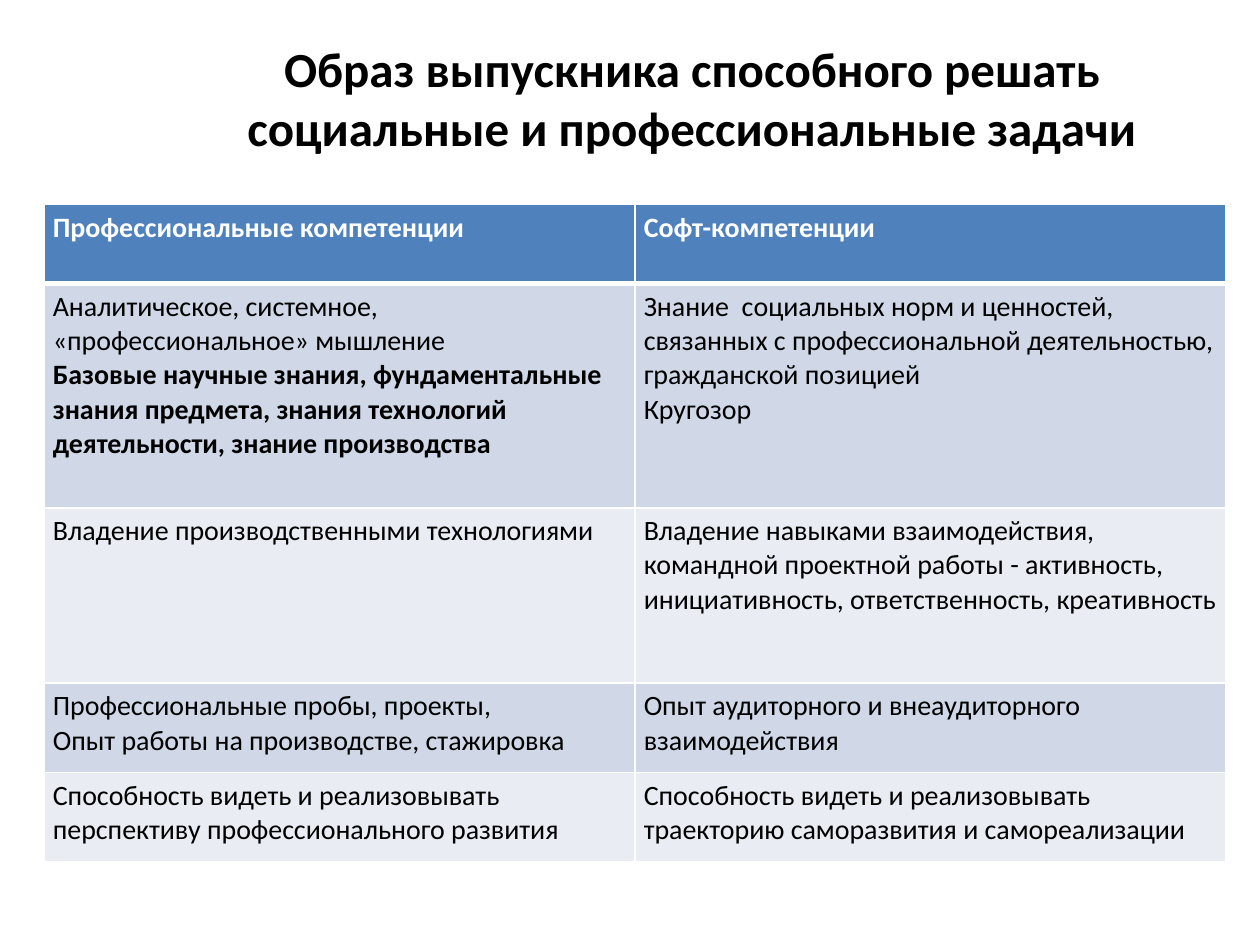
from dataclasses import dataclass

from lxml.etree import SubElement
from pptx import Presentation
from pptx.dml.color import RGBColor
from pptx.enum.text import MSO_ANCHOR, PP_ALIGN
from pptx.oxml.ns import qn
from pptx.util import Inches, Pt


@dataclass(frozen=True)
class Theme:
    font: str = "Calibri"
    title_size: int = 28
    cell_size: int = 16
    text: str = "000000"
    header_text: str = "FFFFFF"
    header_fill: str = "4F81BD"
    band_fills: tuple = ("D0D8E7", "E9ECF3")
    border: str = "FFFFFF"
    thin: float = 0.96
    thick: float = 3


THEME = Theme()

TITLE = "Образ выпускника способного решать социальные и профессиональные задачи"

# Each cell is a list of paragraphs
ROWS = [
    (["Профессиональные компетенции"], ["Софт-компетенции"]),
    (["Аналитическое, системное, «профессиональное» мышление",
      "Базовые научные знания, фундаментальные знания предмета, "
      "знания технологий деятельности, знание производства"],
     ["Знание  социальных норм и ценностей, связанных с профессиональной "
      "деятельностью, гражданской позицией",
      "Кругозор"]),
    (["Владение производственными технологиями"],
     ["Владение навыками взаимодействия, командной проектной работы - "
      "активность, инициативность, ответственность, креативность"]),
    (["Профессиональные пробы, проекты,",
      "Опыт работы на производстве, стажировка"],
     ["Опыт аудиторного и внеаудиторного взаимодействия"]),
    (["Способность видеть и реализовывать перспективу профессионального развития"],
     ["Способность видеть и реализовывать траекторию саморазвития и самореализации"]),
]
ROW_HEIGHTS = (0.63, 1.78, 1.39, 0.71, 0.71)
BOLD_PARAGRAPHS = {ROWS[1][0][1]}


def write_paragraphs(tf, texts, size, color, bold=False, align=PP_ALIGN.LEFT):
    for i, text in enumerate(texts):
        p = tf.paragraphs[0] if i == 0 else tf.add_paragraph()
        p.text = text
        p.alignment = align
        p.font.name = THEME.font
        p.font.size = Pt(size)
        p.font.bold = bold or text in BOLD_PARAGRAPHS
        p.font.color.rgb = RGBColor.from_string(color)


def set_borders(cell, top, bottom):
    tcPr = cell._tc.get_or_add_tcPr()
    widths = {"a:lnL": THEME.thin, "a:lnR": THEME.thin, "a:lnT": top, "a:lnB": bottom}
    for tag, width in widths.items():
        ln = SubElement(tcPr, qn(tag), w=str(Pt(width)))
        fill = SubElement(ln, qn("a:solidFill"))
        SubElement(fill, qn("a:srgbClr"), val=THEME.border)


def add_title(s):
    sp = s.shapes.add_textbox(Inches(1.24), Inches(0.15), Inches(8.5), Inches(1.25))
    tf = sp.text_frame
    tf.word_wrap = True
    tf.vertical_anchor = MSO_ANCHOR.MIDDLE
    write_paragraphs(tf, [TITLE], THEME.title_size, THEME.text, True, PP_ALIGN.CENTER)


def fill_cell(cell, texts, row):
    header = row == 0
    cell.margin_left = cell.margin_right = Inches(0.07)
    cell.margin_top = cell.margin_bottom = Inches(0.05)
    # Borders come before the fill in the cell properties
    set_borders(cell,
                top=THEME.thick if row == 1 else THEME.thin,
                bottom=THEME.thick if header else THEME.thin)
    color = THEME.header_fill if header else THEME.band_fills[(row - 1) % 2]
    cell.fill.solid()
    cell.fill.fore_color.rgb = RGBColor.from_string(color)
    write_paragraphs(cell.text_frame, texts, THEME.cell_size,
                     THEME.header_text if header else THEME.text, header)


def add_competence_table(s):
    table = s.shapes.add_table(len(ROWS), 2, Inches(0.35), Inches(1.62),
                               Inches(9.38), Inches(sum(ROW_HEIGHTS))).table
    for r, (texts, height) in enumerate(zip(ROWS, ROW_HEIGHTS)):
        table.rows[r].height = Inches(height)
        for c, paragraphs in enumerate(texts):
            fill_cell(table.cell(r, c), paragraphs, r)


def main():
    prs = Presentation()
    prs.slide_width, prs.slide_height = Inches(10), Inches(7.5)
    s = prs.slides.add_slide(prs.slide_layouts[6])
    add_title(s)
    add_competence_table(s)
    prs.save("out.pptx")


if __name__ == "__main__":
    main()
